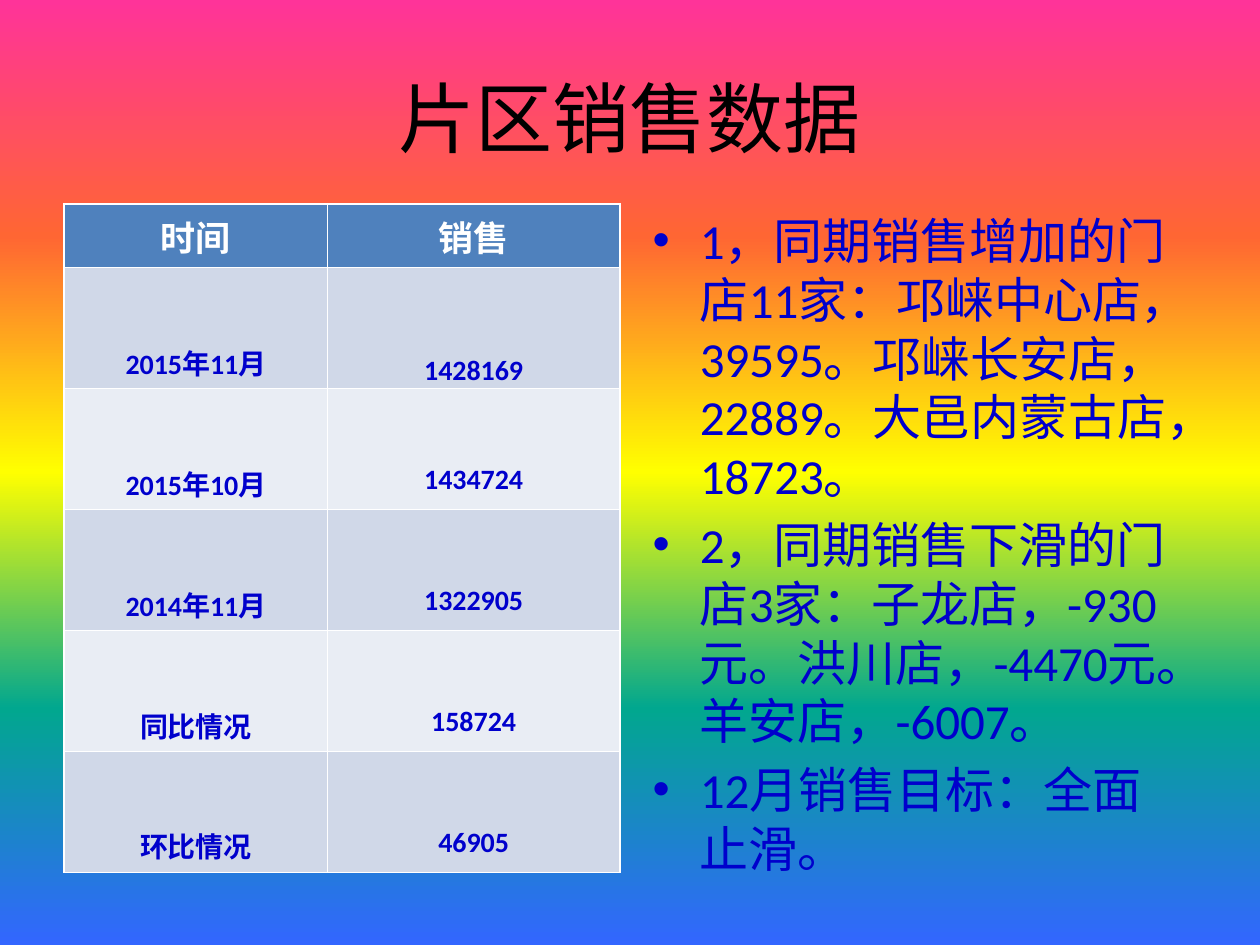
from lxml import etree
from pptx import Presentation
from pptx.dml.color import RGBColor
from pptx.enum.text import MSO_ANCHOR, MSO_AUTO_SIZE, PP_ALIGN
from pptx.oxml.ns import qn
from pptx.util import Inches, Pt

CENTER, BOTTOM, MIDDLE = PP_ALIGN.CENTER, MSO_ANCHOR.BOTTOM, MSO_ANCHOR.MIDDLE
NO_FIT = MSO_AUTO_SIZE.NONE

THEME = {
    "rainbow": ["FF3399", "FF6633", "FFFF00", "01A78F", "3366FF"],
    "title": {"size": 44, "color": "000000", "bold": False},
    "body": {"size": 28, "color": "0000CC", "bold": False},
    "head": {"size": 20, "color": "FFFFFF", "bold": True},
    "cell": {"size": 16, "color": "0000CC", "bold": True},
    "head_fill": "4F81BD",
    "bands": ["D0D8E8", "E9EDF4"],
}
SALES = [
    ("时间", "销售"),
    ("2015年11月", "1428169"),
    ("2015年10月", "1434724"),
    ("2014年11月", "1322905"),
    ("同比情况", "158724"),
    ("环比情况", "46905"),
]
NOTES = [
    "1，同期销售增加的门店11家：邛崃中心店，39595。邛崃长安店，22889。大邑内蒙古店，18723。",
    "2，同期销售下滑的门店3家：子龙店，-930元。洪川店，-4470元。羊安店，-6007。",
    "12月销售目标：全面止滑。",
]
COLS = [2.09, 2.32]
ROWS = [0.5] + [0.96] * (len(SALES) - 1)
TOP = 1.62


def write(p, text, style):
    r = p.add_run()
    r.text = text
    values = {"name": "Calibri", "size": Pt(style["size"]), "bold": style["bold"]}
    for key, value in values.items():
        setattr(r.font, key, value)
    r.font.color.rgb = RGBColor.from_string(style["color"])


def place(sp, left, top, width, height):
    box = {"left": left, "top": top, "width": width, "height": height}
    for key, value in box.items():
        setattr(sp, key, Inches(value))


prs = Presentation()
prs.slide_width, prs.slide_height = Inches(10), Inches(7.5)
s = prs.slides.add_slide(prs.slide_layouts[1])

# Rainbow background, evenly spaced from top to bottom
fill = s.background.fill
fill.gradient()
fill.gradient_angle = 270
stops = s.element.find(".//" + qn("a:gsLst"))
stops.clear()
step = 100000 // (len(THEME["rainbow"]) - 1)
for i, color in enumerate(THEME["rainbow"]):
    stop = etree.SubElement(stops, qn("a:gs"), pos=str(i * step))
    etree.SubElement(stop, qn("a:srgbClr"), val=color)

# Title
title = s.shapes.title
place(title, 0.5, 0.3, 9, 1.25)
title.text_frame.vertical_anchor = MIDDLE
title.text_frame.auto_size = NO_FIT
p = title.text_frame.paragraphs[0]
p.alignment = CENTER
write(p, "片区销售数据", THEME["title"])

# Sales table
frame = s.shapes.add_table(len(ROWS), len(COLS), Inches(0.51), Inches(TOP),
                           Inches(sum(COLS)), Inches(sum(ROWS)))
table = frame.table
for column, width in zip(table.columns, COLS):
    column.width = Inches(width)
for row, height in zip(table.rows, ROWS):
    row.height = Inches(height)
for i, texts in enumerate(SALES):
    for j, text in enumerate(texts):
        cell = table.cell(i, j)
        cell.fill.solid()
        color = THEME["bands"][(i - 1) % 2] if i else THEME["head_fill"]
        cell.fill.fore_color.rgb = RGBColor.from_string(color)
        if i:
            cell.vertical_anchor = BOTTOM
            if j:
                cell.margin_bottom = Inches(0 if i == 1 else 0.1)
        p = cell.text_frame.paragraphs[0]
        p.alignment = CENTER
        write(p, text, THEME["cell" if i else "head"])

# Notes
body = s.placeholders[1]
place(body, 5.08, TOP, 4.42, 5.08)
tf = body.text_frame
tf.auto_size = NO_FIT
for i, text in enumerate(NOTES):
    p = tf.add_paragraph() if i else tf.paragraphs[0]
    write(p, text, THEME["body"])

prs.save("out.pptx")
